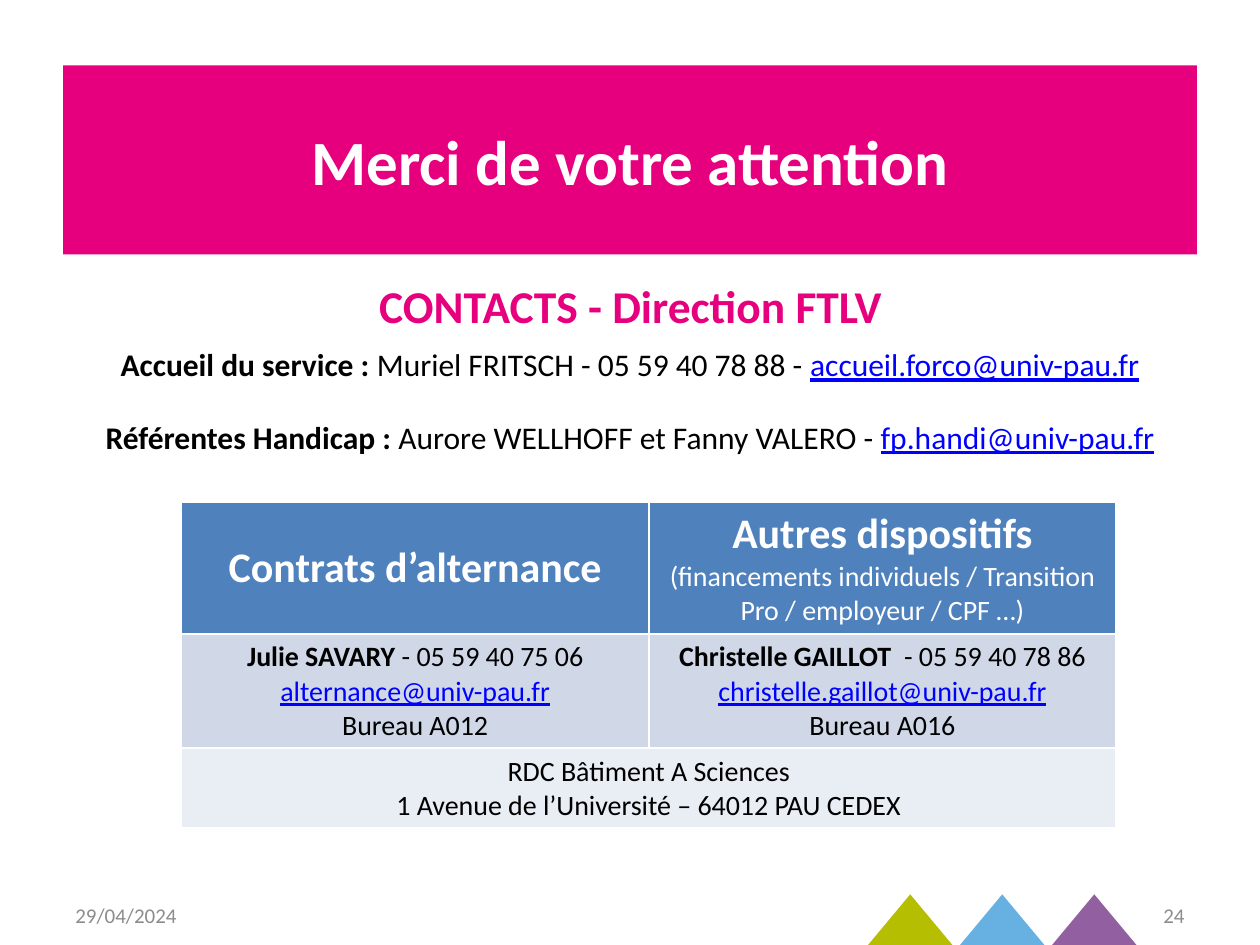
from dataclasses import dataclass

from lxml import etree
from pptx import Presentation
from pptx.dml.color import RGBColor
from pptx.enum.shapes import MSO_SHAPE
from pptx.enum.text import MSO_ANCHOR, MSO_AUTO_SIZE, PP_ALIGN
from pptx.oxml.ns import qn
from pptx.util import Cm, Pt

TRIANGLE = MSO_SHAPE.ISOSCELES_TRIANGLE
MIDDLE, TOP = MSO_ANCHOR.MIDDLE, MSO_ANCHOR.TOP
LEFT, CENTER, RIGHT = PP_ALIGN.LEFT, PP_ALIGN.CENTER, PP_ALIGN.RIGHT


@dataclass(frozen=True)
class Theme:
    font: str = "Calibri"
    pink: str = "E6007E"
    white: str = "FFFFFF"
    black: str = "000000"
    grey: str = "8C8C8C"
    mail: str = "0000FF"
    header: str = "4F81BD"
    contact_band: str = "D0D8E8"
    address_band: str = "E9EDF4"
    triangles: tuple = ("B5BE00", "67B0E2", "9260A0")
    title_size: int = 36
    heading_size: int = 26
    column_size: int = 24
    body_size: int = 18
    cell_size: int = 16
    footer_size: int = 12


theme = Theme()


def write_paragraphs(text_frame, lines, size, color=theme.black, alignment=CENTER):
    """Fill the frame; each line is a list of (text, style) with style plain, bold, head or mail."""
    text_frame.text = "\n".join("" for _ in lines)
    for paragraph, line in zip(text_frame.paragraphs, lines):
        paragraph.alignment = alignment
        for text, style in line:
            run = paragraph.add_run()
            run.text = text
            run.font.name = theme.font
            run.font.size = Pt(theme.column_size if style == "head" else size)
            run.font.bold = style in ("bold", "head")
            run.font.underline = style == "mail"
            run.font.color.rgb = RGBColor.from_string(theme.mail if style == "mail" else color)


def add_label(left, top, width, height, text, style, size, color, alignment, anchor):
    label = slide.shapes.add_textbox(Cm(left), Cm(top), Cm(width), Cm(height))
    label.text_frame.word_wrap = True
    label.text_frame.vertical_anchor = anchor
    write_paragraphs(label.text_frame, [[(text, style)]], size, color, alignment)


presentation = Presentation()
presentation.slide_width, presentation.slide_height = Cm(25.4), Cm(19.05)
slide = presentation.slides.add_slide(presentation.slide_layouts[1])

# Footer triangles
for index, color in enumerate(theme.triangles):
    triangle = slide.shapes.add_shape(
        TRIANGLE, Cm(17.5 + 1.855 * index), Cm(18.03), Cm(1.7), Cm(1.02))
    triangle.shadow.inherit = False
    triangle.fill.solid()
    triangle.fill.fore_color.rgb = RGBColor.from_string(color)
    triangle.line.fill.background()

# Title banner
title = slide.shapes.title
title.left, title.top, title.width, title.height = Cm(1.27), Cm(1.32), Cm(22.86), Cm(3.81)
title.fill.solid()
title.fill.fore_color.rgb = RGBColor.from_string(theme.pink)
title.text_frame.vertical_anchor = MIDDLE
write_paragraphs(title.text_frame, [[("Merci de votre attention", "bold")]],
                 theme.title_size, theme.white)

# Service contacts
body = slide.placeholders[1]
body.left, body.top, body.width, body.height = Cm(1.27), Cm(6.83), Cm(22.86), Cm(10.69)
body.text_frame.auto_size = MSO_AUTO_SIZE.NONE
write_paragraphs(body.text_frame, [
    [("Accueil du service : ", "bold"), ("Muriel FRITSCH - 05 59 40 78 88 - ", "plain"),
     ("accueil.forco@univ-pau.fr", "mail")],
    [("Référentes Handicap : ", "bold"), ("Aurore WELLHOFF et Fanny VALERO - ", "plain"),
     ("fp.handi@univ-pau.fr", "mail")],
], theme.body_size)
for paragraph, space in zip(body.text_frame.paragraphs, (0, 20)):
    paragraph.space_before = Pt(space)
    properties = paragraph._p.get_or_add_pPr()
    properties.set("marL", "0")
    properties.set("indent", "0")
    etree.SubElement(properties, qn("a:buNone"))

add_label(6.81, 5.49, 11.81, 1.37, "CONTACTS - Direction FTLV", "bold",
          theme.heading_size, theme.pink, CENTER, TOP)

# Contact table
row_heights = (2.65, 2.3, 1.6)
table = slide.shapes.add_table(
    3, 2, Cm(3.66), Cm(10.13), Cm(18.84), Cm(sum(row_heights))).table
for row, height in zip(table.rows, row_heights):
    row.height = Cm(height)
table.cell(2, 0).merge(table.cell(2, 1))

rows = [
    (theme.header, theme.white, [
        [[("Contrats d’alternance", "head")]],
        [[("Autres dispositifs", "head")],
         [("(financements individuels / Transition Pro / employeur / CPF …)", "plain")]],
    ]),
    (theme.contact_band, theme.black, [
        [[("Julie SAVARY ", "bold"), ("- 05 59 40 75 06", "plain")],
         [("alternance@univ-pau.fr", "mail")],
         [("Bureau A012", "plain")]],
        [[("Christelle GAILLOT ", "bold"), (" - 05 59 40 78 86", "plain")],
         [("christelle.gaillot@univ-pau.fr", "mail")],
         [("Bureau A016", "plain")]],
    ]),
    (theme.address_band, theme.black, [
        [[("RDC Bâtiment A Sciences", "plain")],
         [("1 Avenue de l’Université – 64012 PAU CEDEX", "plain")]],
    ]),
]
for row_index, (fill, color, cells) in enumerate(rows):
    for column_index, lines in enumerate(cells):
        cell = table.cell(row_index, column_index)
        cell.fill.solid()
        cell.fill.fore_color.rgb = RGBColor.from_string(fill)
        cell.vertical_anchor = MIDDLE
        write_paragraphs(cell.text_frame, lines, theme.cell_size, color)

# Date and slide number
for left, width, text, alignment in ((1.27, 2.82, "29/04/2024", LEFT), (22.91, 1.22, "24", RIGHT)):
    add_label(left, 17.93, width, 1.02, text, "plain",
              theme.footer_size, theme.grey, alignment, MIDDLE)

presentation.save("out.pptx")
